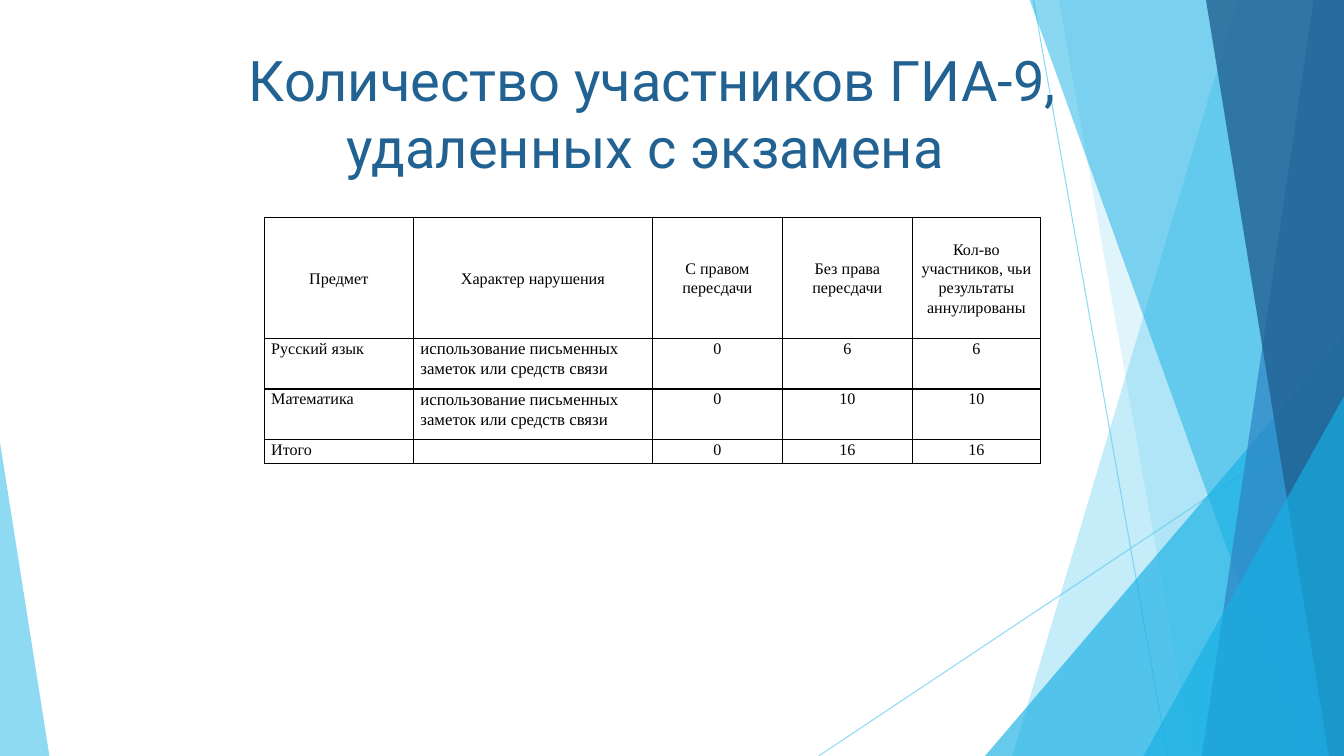
import pptx
import pptx.dml.color
import pptx.enum.shapes
import pptx.enum.text
import pptx.oxml
import pptx.oxml.ns
import pptx.util
from pptx.util import Inches

ALIGN = pptx.enum.text.PP_ALIGN
ANCHOR = pptx.enum.text.MSO_ANCHOR
SHAPE = pptx.enum.shapes.MSO_SHAPE
WIDTH, HEIGHT = 13.33, 7.5
SKY, CYAN, BLUE, NAVY, BLACK = "5FCBEF", "17B0E4", "2E83C3", "226292", "000000"

RAYS = [((10.25, 0), (11.58, HEIGHT)), ((WIDTH, 4.03), (8.12, HEIGHT))]
COLUMNS = [1.48, 2.37, 1.29, 1.29, 1.27]
ROWS = [1.2, 0.5, 0.5, 0.24]
VIOLATION = "использование письменных заметок или средств связи"
REMOVALS = [
    ["Предмет", "Характер нарушения", "С правом пересдачи", "Без права пересдачи",
     "Кол-во участников, чьи результаты аннулированы"],
    ["Русский язык", VIOLATION, "0", "6", "6"],
    ["Математика", VIOLATION, "0", "10", "10"],
    ["Итого", "", "0", "16", "16"],
]


def apply_format(target, values):
    """Set each named attribute of the target."""
    for name, value in values.items():
        setattr(target, name, value)


def add_element(parent, tag, **attributes):
    """Append a drawing element to the parent and return it."""
    element = pptx.oxml.parse_xml(f"<a:{tag} {pptx.oxml.ns.nsdecls('a')}/>")
    for name, value in attributes.items():
        element.set(name, str(value))
    parent.append(element)
    return element


def paint(fill, colour, opacity=100):
    """Give a fill a solid colour with an opacity in percent."""
    fill.solid()
    fill.fore_color.rgb = pptx.dml.color.RGBColor.from_string(colour)
    if opacity < 100:
        colour_element = fill._xPr.find(".//" + pptx.oxml.ns.qn("a:srgbClr"))
        add_element(colour_element, "alpha", val=opacity * 1000)


def finish_facet(facet, colour, opacity):
    """Paint a facet without outline or shadow."""
    facet.shadow.inherit = False
    facet.line.fill.background()
    paint(facet.fill, colour, opacity)


def add_ray(page, start, end):
    """Draw a thin translucent line."""
    points = [Inches(value) for value in (*start, *end)]
    ray = page.shapes.add_connector(pptx.enum.shapes.MSO_CONNECTOR.STRAIGHT, *points)
    ray.line.width = pptx.util.Pt(0.75)
    paint(ray.line.fill, SKY, 70)
    add_element(ray._element.spPr, "effectLst")


def add_band(page, top, bottom, colour, opacity):
    """Draw a full-height band from a slanted left side to the right edge."""
    builder = page.shapes.build_freeform(Inches(top), Inches(-0.01))
    corners = [(WIDTH, -0.01), (WIDTH, HEIGHT), (bottom, HEIGHT)]
    builder.add_line_segments([(Inches(x), Inches(y)) for x, y in corners])
    finish_facet(builder.convert_to_shape(), colour, opacity)


def add_triangle(page, left, top, width, apex, colour, opacity):
    """Draw a triangle that stands on the bottom edge."""
    box = [Inches(value) for value in (left, top, width, HEIGHT - top)]
    triangle = page.shapes.add_shape(SHAPE.ISOSCELES_TRIANGLE, *box)
    triangle.adjustments[0] = apex
    finish_facet(triangle, colour, opacity)


def write(para, text, size, face, colour, align, spacing=1.0):
    """Write one formatted span into a paragraph."""
    apply_format(para, {"alignment": align, "line_spacing": spacing})
    if not text:
        add_element(para._p, "endParaRPr", sz=int(size * 100))
        return
    span = para.add_run()
    span.text = text
    apply_format(span.font, {"size": pptx.util.Pt(size), "name": face, "bold": False})
    paint(span.font.fill, colour)


def add_title(page):
    """Add the heading."""
    box = page.shapes.add_textbox(Inches(1.77), Inches(0.39), Inches(9.4), Inches(1.44))
    apply_format(box.text_frame, {"word_wrap": True, "vertical_anchor": ANCHOR.BOTTOM})
    write(box.text_frame.paragraphs[0], "Количество участников ГИА-9, удаленных с экзамена ",
          40, "Roboto", NAVY, ALIGN.CENTER)


def add_borders(cell):
    """Outline a cell in black and leave it unfilled."""
    properties = cell._tc.get_or_add_tcPr()
    for side in ("lnL", "lnR", "lnT", "lnB"):
        border = add_element(properties, side, w=pptx.util.Pt(1))
        add_element(add_element(border, "solidFill"), "srgbClr", val=BLACK)
    cell.fill.background()


def add_removals_table(page):
    """Add the table of removed participants."""
    frame = page.shapes.add_table(len(ROWS), len(COLUMNS), Inches(2.62), Inches(2.16),
                                  Inches(sum(COLUMNS)), Inches(sum(ROWS)))
    table = frame.table
    apply_format(table, {"first_row": False, "horz_banding": False})
    for column, width in zip(table.columns, COLUMNS):
        column.width = Inches(width)
    for row, height in zip(table.rows, ROWS):
        row.height = Inches(height)
    for r, texts in enumerate(REMOVALS):
        for c, text in enumerate(texts):
            cell = table.cell(r, c)
            apply_format(cell, {
                "margin_left": Inches(0.07), "margin_right": Inches(0.07),
                "margin_top": 0, "margin_bottom": 0,
                "vertical_anchor": ANCHOR.TOP if r else ANCHOR.MIDDLE,
            })
            align = ALIGN.LEFT if r and c < 2 else ALIGN.CENTER
            size = 12 if text == VIOLATION else 11.5
            write(cell.text_frame.paragraphs[0], text, size, "Times New Roman",
                  BLACK, align, 1.07)
            add_borders(cell)


def main():
    """Build and save the deck."""
    deck = pptx.Presentation()
    apply_format(deck, {"slide_width": Inches(WIDTH), "slide_height": Inches(HEIGHT)})
    page = deck.slides.add_slide(deck.slide_layouts[6])
    for start, end in RAYS:
        add_ray(page, start, end)
    add_band(page, 12.28, 10.04, SKY, 36)
    add_band(page, 10.5, 11.83, SKY, 20)
    add_triangle(page, 9.77, 3.33, 3.56, 1, CYAN, 66)
    add_band(page, 10.21, 12.91, CYAN, 50)
    add_band(page, 13.03, 11.92, BLUE, 70)
    add_band(page, 11.96, 13.18, NAVY, 80)
    add_triangle(page, 11.34, 3.93, 1.99, 1, CYAN, 66)
    add_triangle(page, 0, 4.39, 0.49, 0, SKY, 70)
    add_removals_table(page)
    add_title(page)
    deck.save("out.pptx")


if __name__ == "__main__":
    main()
